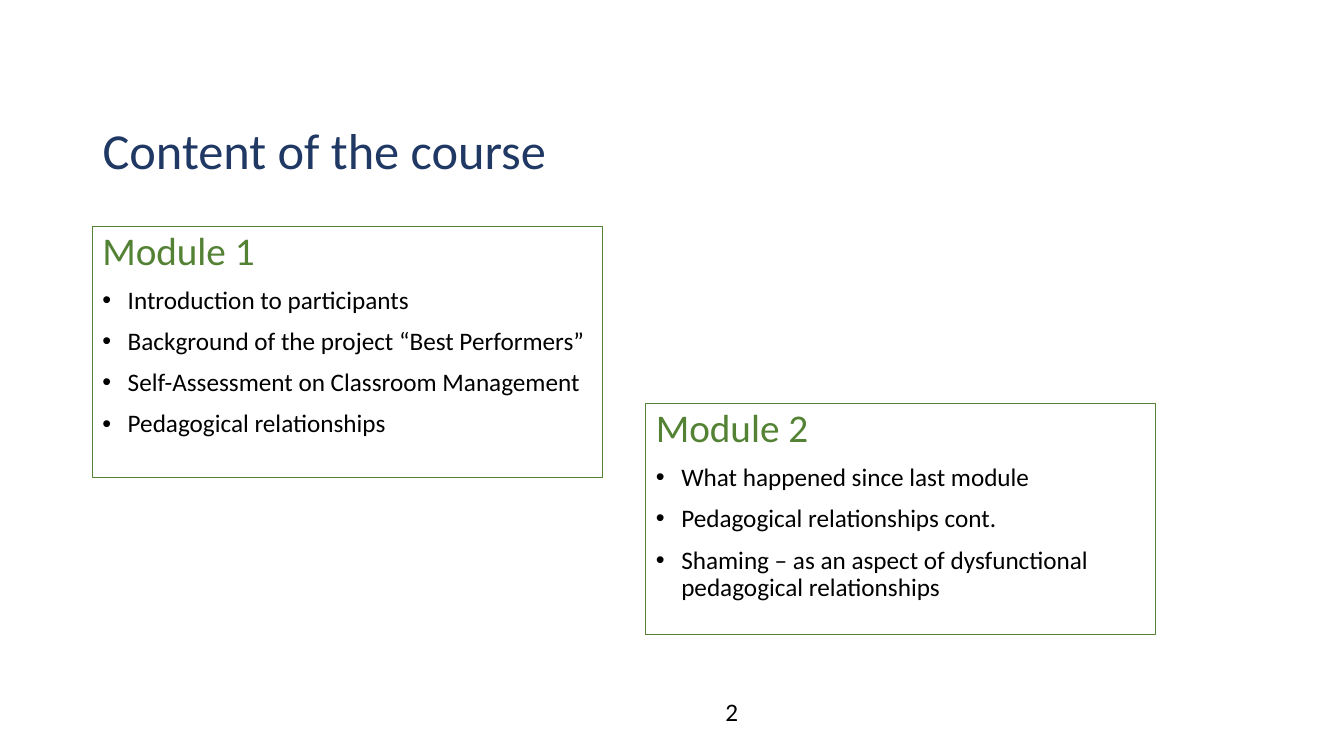
from lxml import etree
from pptx import Presentation
from pptx.dml.color import RGBColor
from pptx.enum.shapes import MSO_SHAPE
from pptx.enum.text import MSO_ANCHOR, PP_ALIGN
from pptx.oxml.ns import qn
from pptx.util import Cm, Pt

RECTANGLE = MSO_SHAPE.RECTANGLE
TOP = MSO_ANCHOR.TOP
LEFT = PP_ALIGN.LEFT
CENTER = PP_ALIGN.CENTER

NAVY = RGBColor(0x20, 0x38, 0x64)
GREEN = RGBColor(0x54, 0x82, 0x35)
BLACK = RGBColor(0, 0, 0)
FONT = "Calibri"

TITLE_ONLY = 5
MARGIN = Cm(2.33)
MODULE_WIDTH = Cm(12.85)
BULLET_INDENT = Cm(0.64)

MODULES = [
    ("Module 1", MARGIN, Cm(5.7), Cm(6.33), [
        "Introduction to participants",
        "Background of the project “Best Performers”",
        "Self-Assessment on Classroom Management",
        "Pedagogical relationships",
    ]),
    ("Module 2", Cm(16.28), Cm(10.17), Cm(5.82), [
        "What happened since last module",
        "Pedagogical relationships cont.",
        "Shaming – as an aspect of dysfunctional pedagogical relationships",
    ]),
]


def write(paragraph, text, size, color, alignment=LEFT):
    paragraph.text = text
    paragraph.alignment = alignment
    for run in paragraph.runs:
        run.font.name = FONT
        run.font.size = Pt(size)
        run.font.color.rgb = color


def add_bullet(paragraph):
    properties = paragraph._p.get_or_add_pPr()
    properties.set("marL", str(BULLET_INDENT))
    properties.set("indent", str(-BULLET_INDENT))
    etree.SubElement(properties, qn("a:buFont"), typeface="Arial")
    etree.SubElement(properties, qn("a:buChar"), char="•")


def set_title(slide, text):
    title = slide.shapes.title
    title.left, title.top = MARGIN, Cm(3.05)
    title.width, title.height = Cm(29.21), Cm(2.46)
    title.text_frame.vertical_anchor = TOP
    paragraph = title.text_frame.paragraphs[0]
    write(paragraph, text, 36, NAVY)
    paragraph.line_spacing = 0.9


def add_module(slide, heading, left, top, height, topics):
    shape = slide.shapes.add_shape(RECTANGLE, left, top, MODULE_WIDTH, height)
    shape.shadow.inherit = False
    shape.fill.background()
    shape.line.color.rgb = GREEN
    shape.line.width = Pt(0.75)
    text_frame = shape.text_frame
    text_frame.word_wrap = True
    text_frame.vertical_anchor = TOP
    first = text_frame.paragraphs[0]
    write(first, heading, 28, GREEN)
    first.line_spacing = 0.9
    for topic in topics:
        paragraph = text_frame.add_paragraph()
        add_bullet(paragraph)
        write(paragraph, topic, 18, BLACK)
        paragraph.line_spacing = 0.9
        paragraph.space_before = Pt(10)


def add_page_number(slide, number):
    box = slide.shapes.add_textbox(Cm(14.63), Cm(17.42), Cm(7.62), Cm(1.02))
    box.text_frame.word_wrap = True
    write(box.text_frame.paragraphs[0], number, 18, BLACK, CENTER)


def main():
    presentation = Presentation()
    presentation.slide_width = Cm(33.87)
    presentation.slide_height = Cm(19.05)
    slide = presentation.slides.add_slide(presentation.slide_layouts[TITLE_ONLY])
    set_title(slide, "Content of the course")
    for module in MODULES:
        add_module(slide, *module)
    add_page_number(slide, "2")
    presentation.save("out.pptx")


if __name__ == "__main__":
    main()
